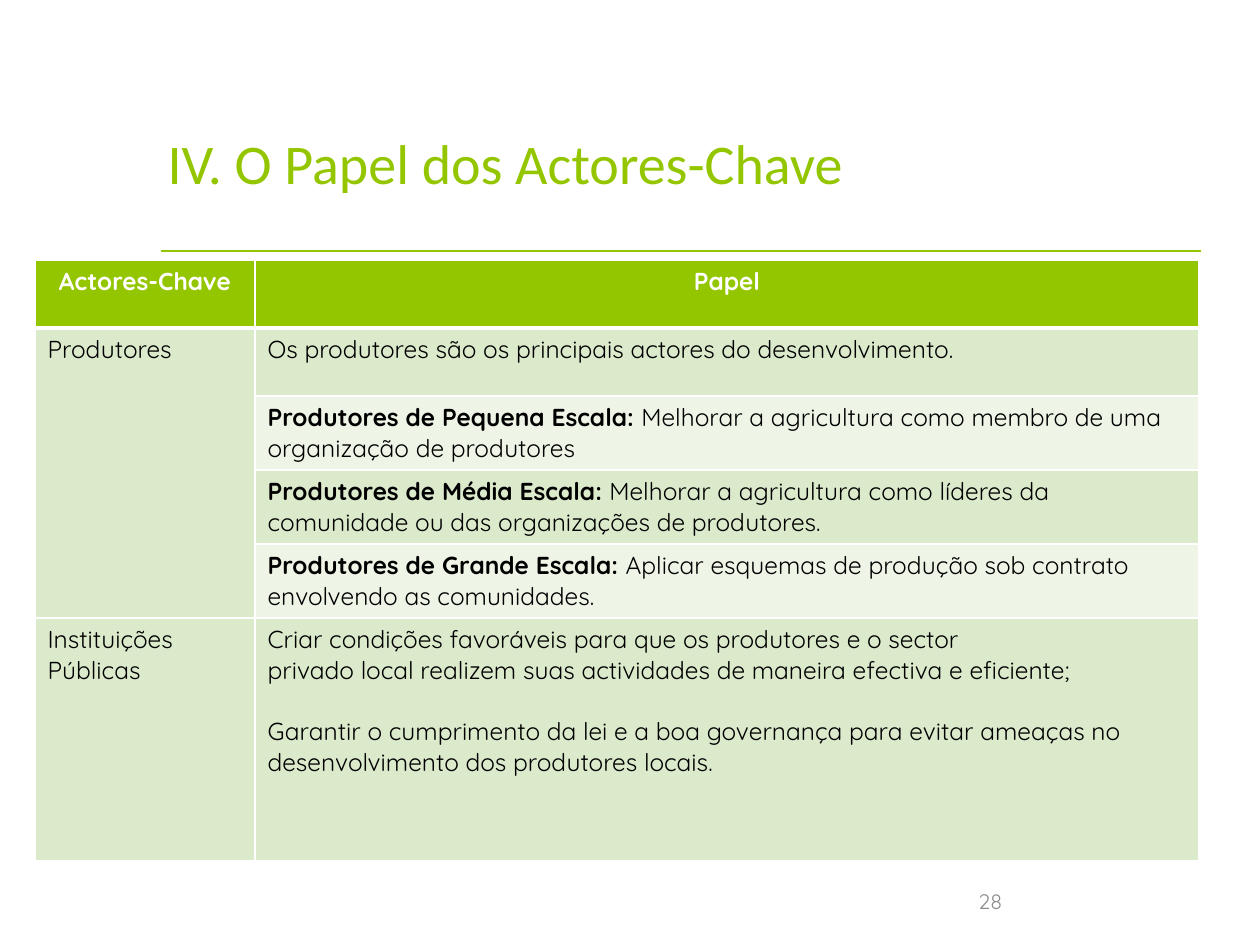
import pptx
import pptx.dml.color
import pptx.enum.shapes
import pptx.enum.text
import pptx.oxml
import pptx.oxml.ns
import pptx.util

EMU_PER_PX = 914400 / 126
GREEN, WHITE, BLACK, GREY = "94C600", "FFFFFF", "000000", "8C8C8C"
BAND_DARK, BAND_LIGHT = "DCEACC", "EEF5E7"
ALIGN = pptx.enum.text.PP_ALIGN
ANCHOR = pptx.enum.text.MSO_ANCHOR
COLUMN_WIDTHS = [220, 944]
ROW_HEIGHTS = [68] * 5 + [243]

PRODUCER_ROLES = [
    ("", "Os produtores são os principais actores do desenvolvimento."),
    ("Produtores de Pequena Escala: ",
     "Melhorar a agricultura como membro de uma organização de produtores"),
    ("Produtores de Média Escala: ",
     "Melhorar a agricultura como líderes da comunidade ou das organizações de produtores."),
    ("Produtores de Grande Escala: ",
     "Aplicar esquemas de produção sob contrato envolvendo as comunidades."),
]
PUBLIC_ROLES = [
    "Criar condições favoráveis para que os produtores e o sector",
    "privado local realizem suas actividades de maneira efectiva e eficiente;",
    "Garantir o cumprimento da lei e a boa governança para evitar ameaças no "
    "desenvolvimento dos produtores locais.",
]


def px(length):
    return pptx.util.Emu(round(length * EMU_PER_PX))


def rgb(colour):
    return pptx.dml.color.RGBColor.from_string(colour)


def set_attributes(target, values):
    for name, value in values.items():
        setattr(target, name, value)


def add_run(paragraph, text, colour, size=14, name="Quicksand", bold=False):
    run = paragraph.add_run()
    run.text = text
    set_attributes(run.font, {"name": name, "size": pptx.util.Pt(size), "bold": bold})
    run.font.color.rgb = rgb(colour)


def set_title(slide, text):
    title = slide.shapes.title
    set_attributes(title, {"left": px(155), "top": px(86), "width": px(1134), "height": px(116)})
    set_attributes(title.text_frame, {
        "vertical_anchor": ANCHOR.BOTTOM,
        "word_wrap": True,
        "auto_size": pptx.enum.text.MSO_AUTO_SIZE.NONE,
    })
    paragraph = title.text_frame.paragraphs[0]
    paragraph.alignment = ALIGN.LEFT
    add_run(paragraph, text, GREEN, 32, "Calibri")


def add_rule(slide):
    rule = slide.shapes.add_connector(
        pptx.enum.shapes.MSO_CONNECTOR.STRAIGHT, px(161), px(251), px(1201), px(251))
    rule.line.color.rgb = rgb(GREEN)
    rule.line.width = pptx.util.Pt(1.25)
    rule._element.spPr.append(pptx.oxml.parse_xml(
        f'<a:effectLst {pptx.oxml.ns.nsdecls("a")}/>'))


def add_page_number(slide, number):
    box = slide.shapes.add_textbox(px(966), px(876), px(294), px(50))
    set_attributes(box.text_frame, {"word_wrap": True, "vertical_anchor": ANCHOR.MIDDLE})
    add_run(box.text_frame.paragraphs[0], number, GREY, 12)


def style_cell(cell, fill, top=1, bottom=1):
    properties = cell._tc.get_or_add_tcPr()
    for side, width in {"L": 1, "R": 1, "T": top, "B": bottom}.items():
        properties.append(pptx.oxml.parse_xml(
            f'<a:ln{side} {pptx.oxml.ns.nsdecls("a")} w="{pptx.util.Pt(width)}">'
            f'<a:solidFill><a:srgbClr val="{WHITE}"/></a:solidFill></a:ln{side}>'))
    cell.fill.solid()
    cell.fill.fore_color.rgb = rgb(fill)


def write_role(cell, label, text):
    paragraph = cell.text_frame.paragraphs[0]
    if label:
        add_run(paragraph, label, BLACK, bold=True)
    add_run(paragraph, text, BLACK)


def write_header(cell, text):
    paragraph = cell.text_frame.paragraphs[0]
    paragraph.alignment = ALIGN.CENTER
    add_run(paragraph, text, WHITE, bold=True)


def add_roles_table(slide):
    table = slide.shapes.add_table(
        len(ROW_HEIGHTS), len(COLUMN_WIDTHS), px(35), px(260),
        px(sum(COLUMN_WIDTHS)), px(sum(ROW_HEIGHTS))).table
    table.horz_banding = False
    for column, width in zip(table.columns, COLUMN_WIDTHS):
        column.width = px(width)
    for row, height in zip(table.rows, ROW_HEIGHTS):
        row.height = px(height)

    fills = [GREEN] + [BAND_DARK, BAND_LIGHT] * 2 + [BAND_DARK]
    for row_index, fill in enumerate(fills):
        top = 3 if row_index == 1 else 1
        bottom = 3 if row_index == 0 else 1
        style_cell(table.cell(row_index, 0), fill if row_index == 0 else BAND_DARK, top, bottom)
        style_cell(table.cell(row_index, 1), fill, top, bottom)

    for column_index, heading in enumerate(["Actores-Chave", "Papel"]):
        write_header(table.cell(0, column_index), heading)
    table.cell(1, 0).merge(table.cell(4, 0))
    write_role(table.cell(1, 0), "", "Produtores")
    for row_index, (label, text) in enumerate(PRODUCER_ROLES, 1):
        write_role(table.cell(row_index, 1), label, text)

    write_role(table.cell(5, 0), "", "Instituições Públicas")
    frame = table.cell(5, 1).text_frame
    write_role(table.cell(5, 1), "", PUBLIC_ROLES[0])
    for text in PUBLIC_ROLES[1:]:
        paragraph = frame.add_paragraph()
        add_run(paragraph, text, BLACK)
    frame.paragraphs[-1].space_before = pptx.util.Pt(17.5)


def main():
    presentation = pptx.Presentation()
    set_attributes(presentation, {"slide_width": px(1260), "slide_height": px(945)})
    slide = presentation.slides.add_slide(presentation.slide_layouts[5])
    add_rule(slide)
    add_roles_table(slide)
    add_page_number(slide, "28")
    set_title(slide, "IV. O Papel dos Actores-Chave")
    presentation.save("out.pptx")


if __name__ == "__main__":
    main()
